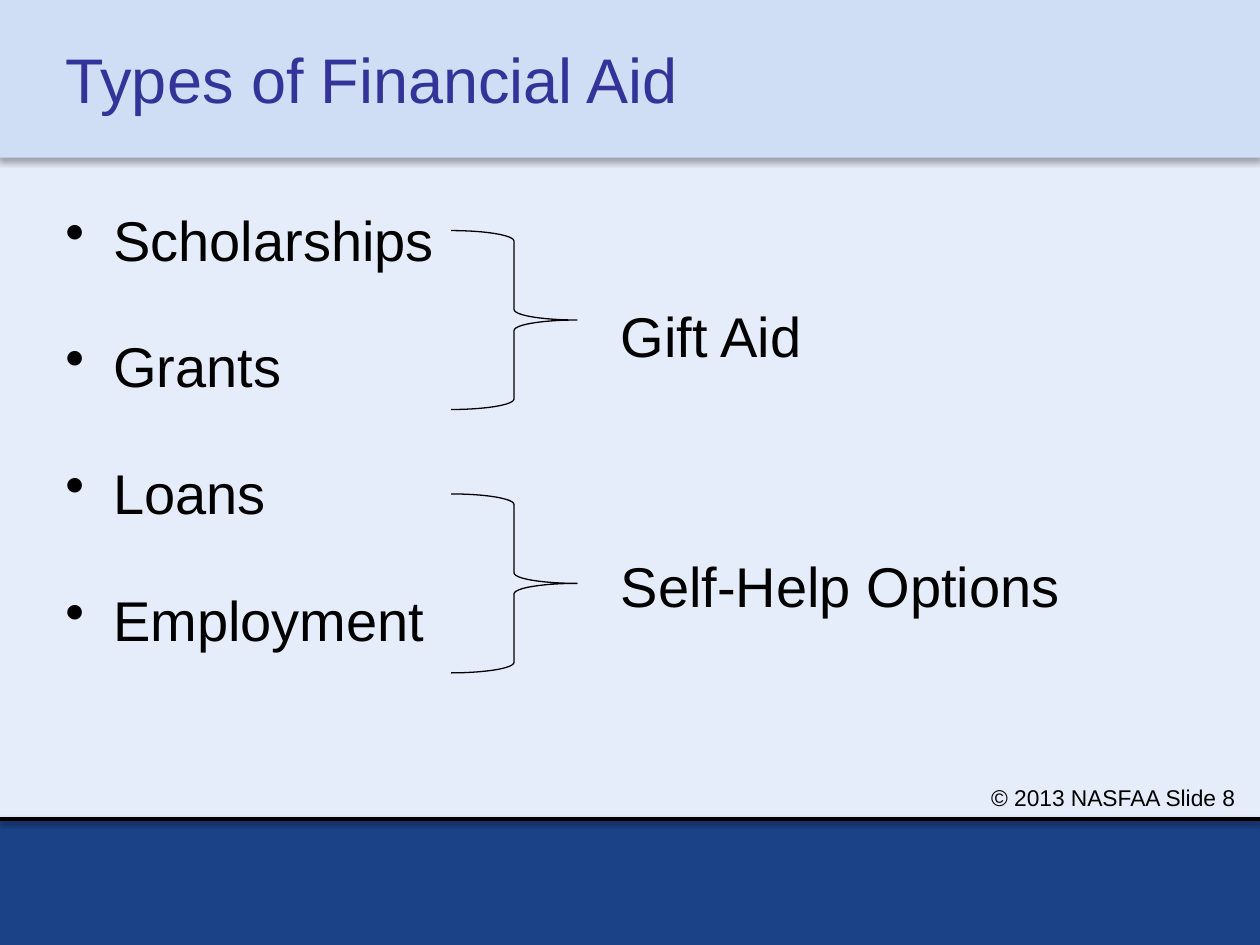
from dataclasses import dataclass
from typing import Any

import pptx
import pptx.dml.color
import pptx.enum.shapes
import pptx.enum.text
import pptx.oxml
import pptx.oxml.ns
import pptx.util

WIDTH, HEIGHT = 10, 7.5
BLACK = "000000"
LEFT = 0.42
CONTENT_WIDTH = 9.25
HEADER_HEIGHT = 1.25
FLOOR = 6.5
INDENT = 0.38
BRACE_LEFT, BRACE_WIDTH, BRACE_HEIGHT = 3.58, 1, 1.42
LABEL_LEFT = 4.83

SHAPE = pptx.enum.shapes.MSO_SHAPE
ALIGN = pptx.enum.text.PP_ALIGN
ANCHOR = pptx.enum.text.MSO_ANCHOR


@dataclass
class Band:
    left: float
    top: float
    width: float
    height: float
    fill: str


@dataclass
class AidGroup:
    kinds: tuple[str, ...]
    label: str
    brace_top: float
    label_top: float
    label_width: float


BACKDROP = (
    Band(0, 0, WIDTH, FLOOR, "E6EDFA"),
    Band(0, FLOOR, WIDTH, HEIGHT - FLOOR, "1B4187"),
)
HEADER = Band(-0.02, 0, WIDTH + 0.02, HEADER_HEIGHT, "CFDDF5")
GROUPS = (
    AidGroup(("Scholarships", "Grants"), "Gift Aid", 1.83, 2.34, 2.33),
    AidGroup(("Loans", "Employment"), "Self-Help Options", 3.92, 4.33, 4.33),
)


def color(value: str) -> pptx.dml.color.RGBColor:
    return pptx.dml.color.RGBColor.from_string(value)


def inches(*lengths: float) -> list[int]:
    return [pptx.util.Inches(length) for length in lengths]


def apply(target: Any, values: dict[str, Any]) -> None:
    for name, value in values.items():
        setattr(target, name, value)


def set_line(shape: Any, value: str, width: float) -> None:
    shape.line.color.rgb = color(value)
    shape.line.width = pptx.util.Pt(width)


def add_shadow(shape: Any, blur: float, distance: float, opacity: int) -> None:
    """Give the shape a black shadow falling straight down."""
    shape._element.spPr.append(pptx.oxml.parse_xml(
        f'<a:effectLst {pptx.oxml.ns.nsdecls("a")}>'
        f'<a:outerShdw blurRad="{pptx.util.Pt(blur)}" dist="{pptx.util.Pt(distance)}" '
        f'dir="5400000" rotWithShape="0"><a:srgbClr val="{BLACK}">'
        f'<a:alpha val="{opacity * 1000}"/></a:srgbClr></a:outerShdw></a:effectLst>'))


def add_band(page: Any, band: Band, kind: Any = SHAPE.RECTANGLE) -> Any:
    shape = page.shapes.add_shape(
        kind, *inches(band.left, band.top, band.width, band.height))
    shape.fill.solid()
    shape.fill.fore_color.rgb = color(band.fill)
    return shape


def add_brace(page: Any, top: float) -> None:
    brace = page.shapes.add_shape(
        SHAPE.RIGHT_BRACE, *inches(BRACE_LEFT, top, BRACE_WIDTH, BRACE_HEIGHT))
    brace.shadow.inherit = False
    brace.fill.background()
    set_line(brace, BLACK, 0.75)


def write(box: Any, lines: list[str], size: float, value: str = BLACK,
          align: Any = ALIGN.LEFT, bullets: bool = False, gap: float = 0) -> None:
    frame = box.text_frame
    frame.word_wrap = True
    for index, line in enumerate(lines):
        para = frame.add_paragraph() if index else frame.paragraphs[0]
        para.alignment = align
        if index:
            para.space_before = pptx.util.Pt(gap)
        if bullets:
            properties = para._p.get_or_add_pPr()
            indent = pptx.util.Inches(INDENT)
            properties.set("marL", str(indent))
            properties.set("indent", str(-indent))
            properties.append(pptx.oxml.parse_xml(
                f'<a:buChar {pptx.oxml.ns.nsdecls("a")} char="•"/>'))
        span = para.add_run()
        span.text = line
        apply(span.font, {"name": "Arial", "size": pptx.util.Pt(size)})
        span.font.color.rgb = color(value)


def add_text(page: Any, left: float, top: float, width: float, height: float) -> Any:
    return page.shapes.add_textbox(*inches(left, top, width, height))


def draw_frame(page: Any) -> None:
    for band in BACKDROP:
        shape = add_band(page, band)
        shape.shadow.inherit = False
        set_line(shape, band.fill, 2)
    rule = page.shapes.add_connector(
        pptx.enum.shapes.MSO_CONNECTOR.STRAIGHT, *inches(0, FLOOR, WIDTH, FLOOR))
    set_line(rule, BLACK, 2)
    add_shadow(rule, 3.1, 1.6, 38)

    footer = add_text(page, 7, 6.17, 3, 0.25)
    footer.text_frame.margin_right = pptx.util.Inches(0.2)
    write(footer, ["© 2013 NASFAA Slide 8"], 13, align=ALIGN.RIGHT)

    header = add_band(page, HEADER, SHAPE.ROUND_2_SAME_RECTANGLE)
    header.adjustments[0] = 0
    header.line.fill.background()
    add_shadow(header, 3.5, 2.2, 32)


def draw_title(page: Any) -> None:
    title = page.shapes.title
    page.shapes._spTree.append(title._element)  # in front of the header band
    left, top, width, height = inches(LEFT, 0, CONTENT_WIDTH, HEADER_HEIGHT)
    apply(title, {"left": left, "top": top, "width": width, "height": height})
    apply(title.text_frame, {"vertical_anchor": ANCHOR.MIDDLE,
                             "auto_size": pptx.enum.text.MSO_AUTO_SIZE.NONE})
    write(title, ["Types of Financial Aid"], 36, "333399")


def draw_aid(page: Any) -> None:
    kinds = [kind for group in GROUPS for kind in group.kinds]
    body = add_text(page, LEFT, 1.58, CONTENT_WIDTH, 4.67)
    write(body, kinds, 32, bullets=True, gap=34)
    for group in GROUPS:
        add_brace(page, group.brace_top)
        label = add_text(page, LABEL_LEFT, group.label_top, group.label_width, 0.64)
        write(label, [group.label], 32)


def main() -> None:
    deck = pptx.Presentation()
    deck.slide_width, deck.slide_height = inches(WIDTH, HEIGHT)
    page = deck.slides.add_slide(deck.slide_layouts.get_by_name("Title Only"))
    draw_frame(page)
    draw_title(page)
    draw_aid(page)
    deck.save("out.pptx")


if __name__ == "__main__":
    main()
